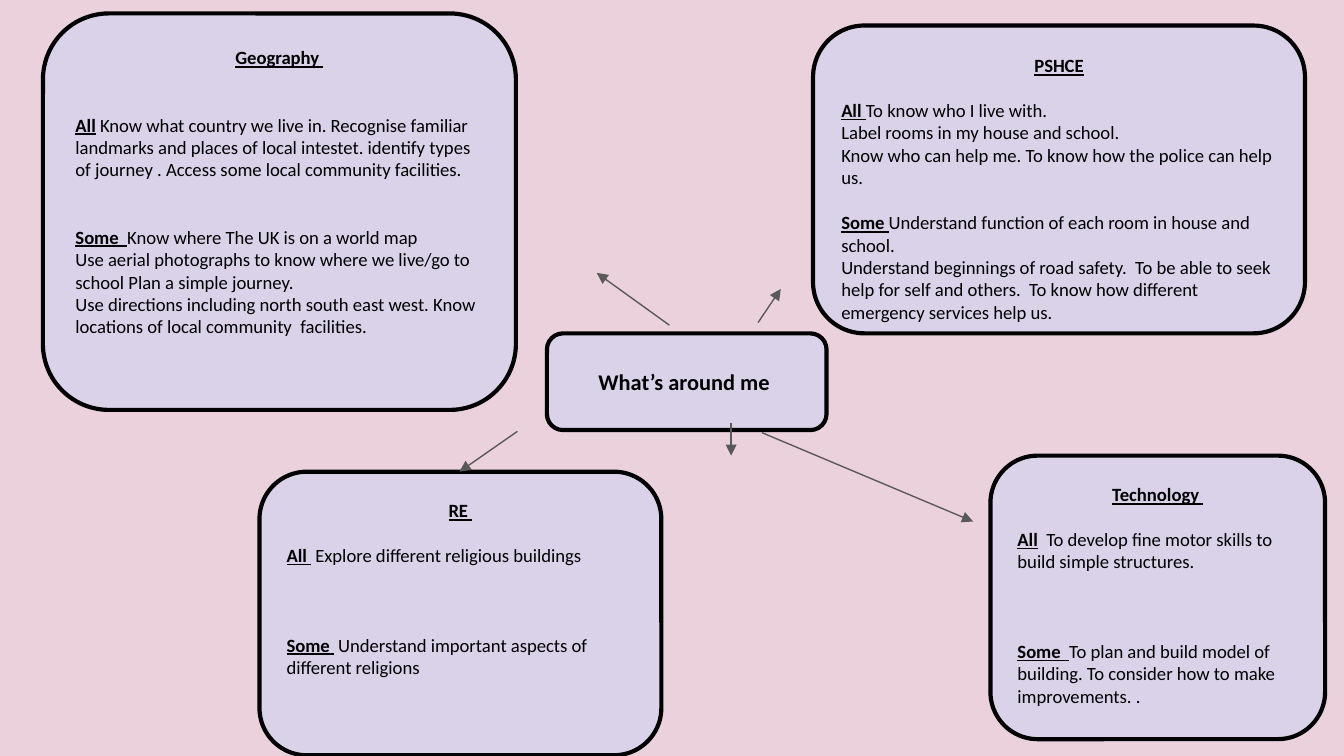
from dataclasses import dataclass

from lxml import etree
from pptx import Presentation
from pptx.dml.color import RGBColor
from pptx.enum import shapes, text
from pptx.oxml import ns
from pptx.util import Pt


@dataclass(frozen=True)
class Theme:
    background: str = "EAD1DC"
    panel: str = "D9D2E9"
    ink: str = "000000"
    arrow: str = "595959"
    font: str = "Calibri"
    topic_size: float = 12
    body_size: float = 10
    line_height: float = 12
    inset: float = 7.2
    border: float = 2.25
    arrow_width: float = 0.75


THEME = Theme()

SUBJECTS = [
    ((530.6, 244.1, 179.3, 151.9), "Technology ", [
        (1, "All", "  To develop fine motor skills to build simple structures."),
        (3, "Some  ", "To plan and build model of building. To consider how to "
                      "make improvements. ."),
    ]),
    ((435.6, 13.7, 263.5, 164.9), "PSHCE", [
        (1, "All ", "To know who I live with."),
        (0, "", "Label rooms in my house and school."),
        (0, "", "Know who can help me. To know how the police can help us."),
        (1, "Some ", "Understand function of each room in house and school."),
        (0, "", "Understand beginnings of road safety.  To be able to seek help "
                "for self and others.  To know how different emergency services "
                "help us."),
    ]),
    ((139, 252.7, 215.3, 151.9), "RE ", [
        (1, "All ", " Explore different religious buildings"),
        (3, "Some ", " Understand important aspects of different religions"),
    ]),
    ((23, 7.2, 253.4, 212.4), "Geography ", [
        (2, "All", " Know what country we live in. Recognise familiar landmarks "
                   "and places of local intestet. identify types of journey . "
                   "Access some local community facilities."),
        (2, "Some  ", "Know where The UK is on a world map"),
        (0, "", "Use aerial photographs to know where we live/go to school "
                "Plan a simple journey."),
        (0, "", "Use directions including north south east west. Know locations "
                "of local community  facilities."),
    ]),
]

ARROWS = [
    (408.2, 231.8, 521.3, 279.4),
    (406.1, 172.8, 418.3, 154.8),
    (277.2, 231.1, 246.2, 252.7),
    (358.6, 174.2, 319.7, 146.2),
    (391.7, 226.8, 391.7, 244.1),
]


def add_text(paragraph, wording, size=THEME.body_size, bold=False, underline=False):
    run = paragraph.add_run()
    run.text = wording
    run.font.name = THEME.font
    run.font.size = Pt(size)
    run.font.bold = bold
    run.font.underline = underline
    run.font.color.rgb = RGBColor.from_string(THEME.ink)


def add_panel(slide, box, anchor):
    panel = slide.shapes.add_shape(
        shapes.MSO_SHAPE.ROUNDED_RECTANGLE, *(Pt(length) for length in box))
    panel.shadow.inherit = False
    panel.fill.solid()
    panel.fill.fore_color.rgb = RGBColor.from_string(THEME.panel)
    panel.line.color.rgb = RGBColor.from_string(THEME.ink)
    panel.line.width = Pt(THEME.border)
    frame = panel.text_frame
    frame.word_wrap = True
    frame.vertical_anchor = anchor
    frame.margin_left = frame.margin_right = Pt(THEME.inset)
    frame.margin_top = frame.margin_bottom = Pt(THEME.inset)
    frame.paragraphs[0].alignment = text.PP_ALIGN.CENTER
    return frame


def add_topic(slide, box, topic):
    frame = add_panel(slide, box, text.MSO_ANCHOR.MIDDLE)
    add_text(frame.paragraphs[0], topic, size=THEME.topic_size, bold=True)


def add_subject(slide, box, subject, goals):
    frame = add_panel(slide, box, text.MSO_ANCHOR.TOP)
    add_text(frame.paragraphs[0], subject, bold=True, underline=True)
    for gap_lines, group, goal in goals:
        paragraph = frame.add_paragraph()
        paragraph.alignment = text.PP_ALIGN.LEFT
        paragraph.space_before = Pt(gap_lines * THEME.line_height)
        if group:
            add_text(paragraph, group, bold=True, underline=True)
        add_text(paragraph, goal)


def add_arrow(slide, ends):
    arrow = slide.shapes.add_connector(
        shapes.MSO_CONNECTOR.STRAIGHT, *(Pt(length) for length in ends))
    arrow.line.color.rgb = RGBColor.from_string(THEME.arrow)
    arrow.line.width = Pt(THEME.arrow_width)
    etree.SubElement(arrow.line._get_or_add_ln(), ns.qn("a:tailEnd"), type="triangle")
    etree.SubElement(arrow._element.spPr, ns.qn("a:effectLst"))


def main():
    deck = Presentation()
    deck.slide_width, deck.slide_height = Pt(720), Pt(405)
    slide = deck.slides.add_slide(deck.slide_layouts[6])
    slide.background.fill.solid()
    slide.background.fill.fore_color.rgb = RGBColor.from_string(THEME.background)
    add_topic(slide, (293, 178.6, 149.8, 51.8), "What’s around me ")
    for box, subject, goals in SUBJECTS:
        add_subject(slide, box, subject, goals)
    for ends in ARROWS:
        add_arrow(slide, ends)
    deck.save("out.pptx")


if __name__ == "__main__":
    main()
